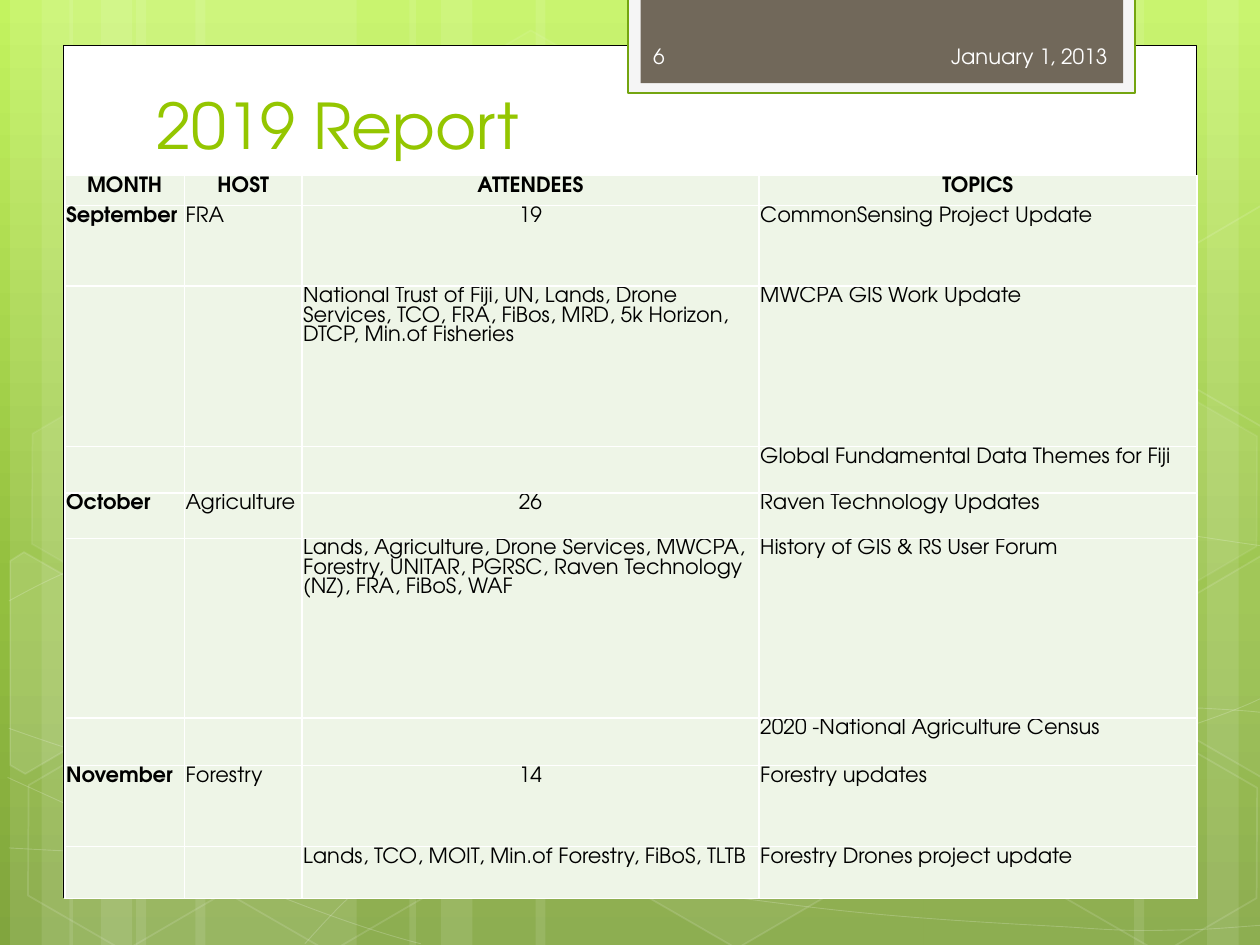
import copy
import math
import pptx
import pptx.dml.color
import pptx.enum.shapes
import pptx.enum.text
import pptx.oxml
import pptx.oxml.ns
import pptx.util

RGB = pptx.dml.color.RGBColor
WHITE = RGB(0xFF, 0xFF, 0xFF)
BLACK = RGB(0, 0, 0)
PALE = RGB(0xF5, 0xF5, 0xF5)
BROWN = RGB(0x71, 0x68, 0x5A)
GREEN = RGB(0x74, 0xA5, 0x10)
LIME = RGB(0x94, 0xC6, 0x00)
TAB_TEXT = RGB(0xFE, 0xFE, 0xFE)
CELL_TINT = RGB(0xEE, 0xF5, 0xE7)
SKY = [(0, RGB(0xC3, 0xF3, 0x5F)), (0.62, RGB(0x93, 0xBF, 0x3F)), (1, RGB(0x81, 0xA5, 0x3E))]
FONT = "TeX Gyre Adventor"
ALIGN = pptx.enum.text.PP_ALIGN
ANCHOR = pptx.enum.text.MSO_ANCHOR
KIND = pptx.enum.shapes.MSO_SHAPE
EMU = pptx.util.Emu
QN = pptx.oxml.ns.qn
NS = pptx.oxml.ns.nsdecls("a")

deck = pptx.Presentation()
deck.slide_width = pptx.util.Inches(10)
deck.slide_height = pptx.util.Inches(7.5)
UNIT = deck.slide_width / 100
slide = deck.slides.add_slide(deck.slide_layouts[5])
shapes = slide.shapes


def write(frame, text, size=12, color=BLACK, bold=False, align=ALIGN.LEFT, spacing=None):
    frame.word_wrap = True
    paragraph = frame.paragraphs[0]
    paragraph.text = text
    paragraph.alignment = align
    paragraph.line_spacing = spacing
    paragraph.font.name = FONT
    paragraph.font.size = pptx.util.Pt(size)
    paragraph.font.bold = bold
    paragraph.font.color.rgb = color


def paint(shape, fill=None, fill_alpha=100, line=None, width=1, line_alpha=100):
    shape.shadow.inherit = False
    for target, color, alpha in ((shape.fill, fill, fill_alpha), (shape.line.fill, line, line_alpha)):
        if color is None:
            target.background()
            continue
        target.solid()
        target.fore_color.rgb = color
        if alpha < 100:
            holder = shape.element.spPr
            if target is not shape.fill:
                holder = holder.find(QN("a:ln"))
            tint = holder.find(QN("a:solidFill"))[0]
            tint.append(pptx.oxml.parse_xml(f'<a:alpha {NS} val="{alpha * 1000}"/>'))
    if line is not None:
        shape.line.width = pptx.util.Pt(width)


backdrop = slide.background.fill
backdrop.gradient()
backdrop.gradient_angle = 270
stop_list = slide.element.find(".//" + QN("a:gsLst"))
stop_list.insert(1, copy.deepcopy(stop_list[0]))
for stop, (position, color) in zip(backdrop.gradient_stops, SKY):
    stop.position = position
    stop.color.rgb = color

stripes = [(10.8, 17.5, 0), (0.8, 5, 0), (3.3, 8.3, 0), (15.5, 17.5, 0), (5.5, 5, 0), (8, 8.3, 0),
           (73.3, 17.5, 180), (95.8, 5, 180), (90, 8.3, 180),
           (42.5, 30.8, 0), (32.5, 5, 0), (35, 8.3, 0)]
for left, width, turn in stripes:
    stripe = shapes.add_shape(KIND.RECTANGLE, EMU(left * UNIT), 0, EMU(width * UNIT), deck.slide_height)
    stripe.rotation = turn
    paint(stripe, WHITE, 10)

waves = [
    [(0.7, 67.3), (6.1, 67.6, 11.5, 67.9, 19, 67.8), (26.5, 67.7, 35.8, 67.5, 45.8, 66.5),
     (55.8, 65.5, 70, 63.6, 79.2, 61.7), (88.3, 59.8, 97.7, 56.8, 100.7, 55.1)],
    [(0.7, 47.7), (3.6, 46.1, 6.5, 44.6, 12.1, 43.1), (17.8, 41.6, 25.9, 39.4, 34.7, 38.7),
     (43.6, 38, 54.4, 37.9, 65.4, 38.7), (76.4, 39.5, 94.7, 42.6, 100.7, 43.4)],
    [(0.6, 61.7), (12.7, 67.2, 24.7, 72.7, 33.4, 74.9)],
    [(0.7, 57.8), (3.8, 58.9, 7, 60, 12.8, 61.6), (18.6, 63.1, 27.3, 65.6, 35.7, 67.3),
     (44, 69, 54.5, 70.8, 62.8, 71.8), (71.1, 72.9, 80, 73.3, 85.3, 73.6),
     (90.5, 74, 91.9, 73.8, 94.5, 73.8), (97.1, 73.7, 98.9, 73.5, 100.7, 73.4)],
    [(24.2, 74.9), (26, 72.9, 27.8, 70.9, 30.2, 69.1), (32.6, 67.3, 36, 65.3, 38.8, 63.9),
     (41.6, 62.5, 43.3, 61.9, 47, 60.9), (50.6, 59.9, 57.3, 58.5, 60.8, 57.8),
     (64.4, 57.1, 64.9, 57.1, 68, 56.9), (71.1, 56.6, 76, 56.3, 79.4, 56.2),
     (82.9, 56.1, 88.6, 56.2, 88.6, 56.2), (90.8, 56.2, 93.1, 56.2, 95.3, 56.2),
     (97.1, 56.3, 98.8, 56.4, 99.7, 56.5), (100.6, 56.6, 100.3, 56.5, 100.6, 56.6)],
]
for start, *bends in waves:
    points = [(x * UNIT, y * UNIT) for bend in bends for x, y in zip(bend[::2], bend[1::2])]
    builder = shapes.build_freeform(start[0] * UNIT, start[1] * UNIT)
    builder.add_line_segments(points, close=False)
    wave = builder.convert_to_shape()
    legs = wave.element.findall(".//" + QN("a:lnTo"))
    for first in range(0, len(legs), 3):
        curve = pptx.oxml.parse_xml(f"<a:cubicBezTo {NS}/>")
        legs[first].addprevious(curve)
        for leg in legs[first:first + 3]:
            curve.append(leg[0])
            leg.getparent().remove(leg)
    paint(wave, line=WHITE, width=0.5, line_alpha=20)

hexagons = [(33.4, 3.6, 4, 8), (49.7, 58.9, 6, 12), (1.1, 59.1, 0, 12), (1.4, 31.2, 7, 8),
            (17.4, 59.2, 0, 12), (75.3, 45.3, 10, 12), (83.4, 59.3, 0, 12), (83.4, 31.4, 7, 8)]
TILT = 30
for left, top, fill_alpha, line_alpha in hexagons:
    hexagon = shapes.add_shape(KIND.HEXAGON, *(EMU(v * UNIT) for v in (left, top, 17.5, 15.2)))
    hexagon.adjustments[0] = 0.285
    hexagon.rotation = TILT
    paint(hexagon, WHITE if fill_alpha else None, fill_alpha, WHITE, 1, line_alpha)

cut_hexagons = [
    (10, (3.6, 53.5), [(0.8, 44.5), (1.9, 43.8), (9.6, 48.2), (9.5, 57), (2, 61.4), (0.8, 60.7)]),
    (4, (98.5, 52), [(92.6, 48.5), (100.1, 44.1), (100.9, 44.6), (100.9, 61.3), (100.2, 61.7),
                     (92.6, 57.3)]),
    (0, (98.5, 24.1), [(92.6, 20.7), (100.1, 16.3), (101, 16.8), (100.9, 33.5), (100.2, 33.9),
                       (92.6, 29.5)]),
]
cos, sin = math.cos(math.radians(TILT)), math.sin(math.radians(TILT))
for fill_alpha, (cx, cy), corners in cut_hexagons:
    level = [((cx + (x - cx) * cos + (y - cy) * sin) * UNIT,
              (cy - (x - cx) * sin + (y - cy) * cos) * UNIT) for x, y in corners]
    builder = shapes.build_freeform(*level[0])
    builder.add_line_segments(level[1:], close=True)
    cut_hexagon = builder.convert_to_shape()
    cut_hexagon.rotation = TILT
    paint(cut_hexagon, WHITE if fill_alpha else None, fill_alpha, WHITE, 1, 12)

panels = [((5, 3.6, 90, 67.6), WHITE, BLACK, 0.5),
          ((49.85, -0.2, 40.25, 7.6), PALE, GREEN, 1.25),
          ((50.85, -0.2, 38.3, 6.8), BROWN, None, 0)]
for box, fill, line, width in panels:
    panel = shapes.add_shape(KIND.RECTANGLE, *(EMU(v * UNIT) for v in box))
    paint(panel, fill, line=line, width=width)

report = [
    ("MONTH", "HOST", "ATTENDEES", "TOPICS"),
    ("September", "FRA", "19", "CommonSensing Project Update"),
    ("", "", "National Trust of Fiji, UN, Lands, Drone Services, TCO, FRA, FiBos, MRD, 5k Horizon, "
             "DTCP, Min.of Fisheries", "MWCPA GIS Work Update"),
    ("", "", "", "Global Fundamental Data Themes for Fiji"),
    ("October", "Agriculture", "26", "Raven Technology Updates"),
    ("", "", "Lands, Agriculture, Drone Services, MWCPA, Forestry, UNITAR, PGRSC, Raven Technology "
             "(NZ), FRA, FiBoS, WAF", "History of GIS & RS User Forum"),
    ("", "", "", "2020 -National Agriculture Census"),
    ("November", "Forestry", "14", "Forestry updates"),
    ("", "", "Lands, TCO, MOIT, Min.of Forestry, FiBoS, TLTB", "Forestry Drones project update"),
]
column_widths = [9.5, 9.33, 36.27, 34.75]
row_heights = [2.38, 6.4, 12.73, 3.72, 3.58, 14.28, 3.77, 6.43, 4.1]
table_box = (5.14, 13.92, sum(column_widths), sum(row_heights))
meetings = shapes.add_table(len(report), len(column_widths), *(EMU(v * UNIT) for v in table_box)).table
meetings.first_row = False
meetings.horz_banding = False
for column, width in zip(meetings.columns, column_widths):
    column.width = EMU(width * UNIT)
for r, entries in enumerate(report):
    meetings.rows[r].height = EMU(row_heights[r] * UNIT)
    for c, entry in enumerate(entries):
        cell = meetings.cell(r, c)
        cell.margin_left = cell.margin_right = cell.margin_top = EMU(0.1 * UNIT)
        cell.margin_bottom = 0
        for side in "LRTB":
            cell._tc.get_or_add_tcPr().append(pptx.oxml.parse_xml(
                f'<a:ln{side} {NS} w="12700"><a:solidFill>'
                f'<a:srgbClr val="{WHITE}"/></a:solidFill></a:ln{side}>'))
        cell.fill.solid()
        cell.fill.fore_color.rgb = CELL_TINT
        centred = r == 0 or entry.isdigit()
        write(cell.text_frame, entry, bold=r == 0 or c == 0,
              align=ALIGN.CENTER if centred else ALIGN.LEFT, spacing=pptx.util.Pt(11.1))

tab_labels = [((65.6, 2.42, 23.3, 4), "January 1, 2013", ALIGN.RIGHT),
              ((50.85, 2.42, 14.6, 4), "6", ALIGN.LEFT)]
for box, text, align in tab_labels:
    label = shapes.add_textbox(*(EMU(v * UNIT) for v in box)).text_frame
    label.vertical_anchor = ANCHOR.MIDDLE
    write(label, text, color=TAB_TEXT, align=align)

heading = shapes.title
heading.left, heading.top, heading.width, heading.height = (
    EMU(v * UNIT) for v in (11.4, 7.6, 76.8, 5.8))
heading.text_frame.auto_size = pptx.enum.text.MSO_AUTO_SIZE.NONE
heading.text_frame.vertical_anchor = ANCHOR.BOTTOM
write(heading.text_frame, "2019 Report", size=36, color=LIME)
shapes.element.append(heading.element)

deck.save("out.pptx")
